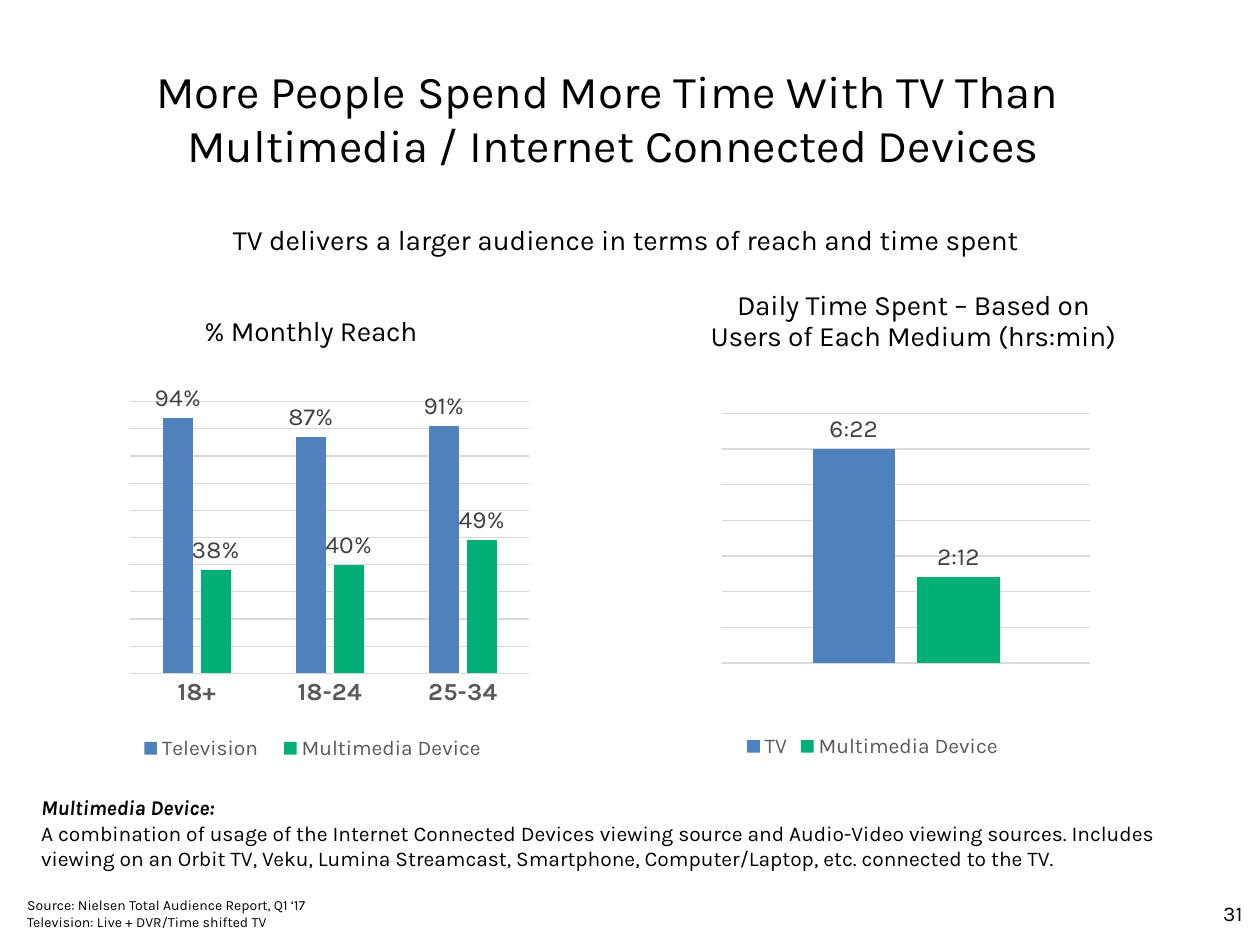
import pptx
import pptx.chart.data
import pptx.dml.color
import pptx.enum.chart
import pptx.enum.text
import pptx.oxml
import pptx.oxml.ns
import pptx.util

Cm = pptx.util.Cm
kinds = pptx.enum.chart
left = pptx.enum.text.PP_ALIGN.LEFT
mid = pptx.enum.text.PP_ALIGN.CENTER


def rgb(code):
    return pptx.dml.color.RGBColor.from_string(code)


def style(font, size, code="000000", **more):
    looks = {"name": "Karla", "size": pptx.util.Pt(size),
             "bold": False, "italic": False, **more}
    for key, value in looks.items():
        setattr(font, key, value)
    font.color.rgb = rgb(code)


deck = pptx.Presentation()
deck.slide_width, deck.slide_height = Cm(25.4), Cm(19.05)
slide = deck.slides.add_slide(deck.slide_layouts[6])

# Text boxes: place, size, alignment, lines
heavy = {"bold": True, "italic": True}
texts = [
    ((0, 1.14, 24.74, 3.68), 26, mid,
     [("More People Spend More Time With TV Than \vMultimedia / Internet Connected Devices", {})]),
    ((2.54, 4.37, 20.29, 0.94), 16, mid,
     [("TV delivers a larger audience in terms of reach and time spent ", {})]),
    ((0.58, 15.9, 24.16, 1.8), 12, left,
     [("Multimedia Device:", heavy),
      ("A combination of usage of the Internet Connected Devices viewing source and "
       "Audio-Video viewing sources. Includes viewing on an Orbit TV, Veku, Lumina "
       "Streamcast, Smartphone, Computer/Laptop, etc. connected to the TV.", {})]),
    ((0.3, 17.95, 19.35, 0.94), 8, left,
     [("Source: Nielsen Total Audience Report, Q1 ‘17", {}),
      ("Television: Live + DVR/Time shifted TV", {})]),
    ((24.41, 18.03, 0.99, 1.02), 12, left, [("31", {})]),
]
for place, size, align, lines in texts:
    frame = slide.shapes.add_textbox(*map(Cm, place)).text_frame
    frame.word_wrap = True
    for i, (words, more) in enumerate(lines):
        para = frame.paragraphs[0] if i == 0 else frame.add_paragraph()
        para.text = words
        para.alignment = align
        for run in para.runs:
            style(run.font, size, **more)

# Charts: series hold name, values, colour and label texts
plans = [
    {"place": (1.14, 5.51, 9.93, 9.96), "title": ["% Monthly Reach"],
     "cats": ["18+", "18-24", "25-34"], "top": 1, "step": 0.1, "form": "0%",
     "series": [("Television", [0.94, 0.87, 0.91], "4F81BD", []),
                ("Multimedia Device", [0.38, 0.4, 0.49], "00AF75", [])],
     "axis": True,
     "plot": {"x": 0.15, "y": 0.26, "w": 0.81, "h": 0.55},
     "head": {"x": 0.29, "y": 0.07},
     "key": {"x": 0.14, "y": 0.93, "w": 0.76, "h": 0.07}},
    {"place": (12.37, 5.72, 10.44, 9.68),
     "title": ["Daily Time Spent – Based on", "Users of Each Medium (hrs:min)"],
     "cats": ["1"], "top": 7, "step": 1, "form": "General",
     "series": [("TV", [6], "4F81BD", ["6:22"]),
                ("Multimedia Device", [2.4], "00AF75", ["2:12"])],
     "axis": False,
     "plot": {"x": 0.21, "y": 0.27, "w": 0.71, "h": 0.52},
     "head": {"x": 0.18, "y": 0},
     "key": {}},
]
for plan in plans:
    data = pptx.chart.data.CategoryChartData(number_format=plan["form"])
    data.categories = plan["cats"]
    for name, values, *rest in plan["series"]:
        data.add_series(name, values)
    chart = slide.shapes.add_chart(kinds.XL_CHART_TYPE.COLUMN_CLUSTERED,
                                   *map(Cm, plan["place"]), data).chart
    style(chart.font, 10)

    # Title and legend
    chart.has_title = True
    chart.chart_title.include_in_layout = False
    frame = chart.chart_title.text_frame
    for i, words in enumerate(plan["title"]):
        para = frame.paragraphs[0] if i == 0 else frame.add_paragraph()
        para.text = words
        para.alignment = mid
        style(para.runs[0].font, 16)
    chart.has_legend = True
    chart.legend.position = kinds.XL_LEGEND_POSITION.BOTTOM
    chart.legend.include_in_layout = False
    style(chart.legend.font, 12, "595959")

    # Axes
    axis, scale = chart.category_axis, chart.value_axis
    axis.visible = plan["axis"]
    axis.major_tick_mark = kinds.XL_TICK_MARK.NONE
    style(axis.tick_labels.font, 14, "595959", bold=True)
    limits = {"visible": False, "has_major_gridlines": True, "minimum_scale": 0,
              "maximum_scale": plan["top"], "major_unit": plan["step"]}
    for key, value in limits.items():
        setattr(scale, key, value)
    for line in (axis.format.line, scale.major_gridlines.format.line):
        line.color.rgb = rgb("D9D9D9")
        line.width = pptx.util.Pt(0.75)

    # Bars and their labels
    plot = chart.plots[0]
    for key, value in {"gap_width": 219, "overlap": -27,
                       "vary_by_categories": False}.items():
        setattr(plot, key, value)
    for bars, (name, values, code, marks) in zip(plot.series, plan["series"]):
        bars.format.fill.solid()
        bars.format.fill.fore_color.rgb = rgb(code)
        tags = bars.data_labels
        for key, value in {"show_value": True, "number_format": plan["form"],
                           "number_format_is_linked": False,
                           "position": kinds.XL_LABEL_POSITION.OUTSIDE_END}.items():
            setattr(tags, key, value)
        style(tags.font, 14, "404040")
        for i, mark in enumerate(marks):
            tag = bars.points[i].data_label
            tag.text_frame.text = mark
            tag.position = kinds.XL_LABEL_POSITION.OUTSIDE_END
            style(tag.text_frame.paragraphs[0].runs[0].font, 14, "404040")

    # Manual layout of plot, title and legend
    root = chart.plots[0]._element.getparent()
    for owner, part in ((root, "plot"), (chart.chart_title._element, "head"),
                        (chart.legend._element, "key")):
        if not plan[part]:
            continue
        for old in owner.findall(pptx.oxml.ns.qn("c:layout")):
            owner.remove(old)
        inner = '<c:layoutTarget val="inner"/>' if part == "plot" else ""
        modes = "".join(f'<c:{k}Mode val="edge"/>' for k in "xy")
        sizes = "".join(f'<c:{k} val="{v}"/>' for k, v in plan[part].items())
        layout = pptx.oxml.parse_xml(
            f'<c:layout {pptx.oxml.ns.nsdecls("c")}><c:manualLayout>'
            f'{inner}{modes}{sizes}</c:manualLayout></c:layout>')
        owner.insert(0 if part == "plot" else 1, layout)

deck.save("out.pptx")
